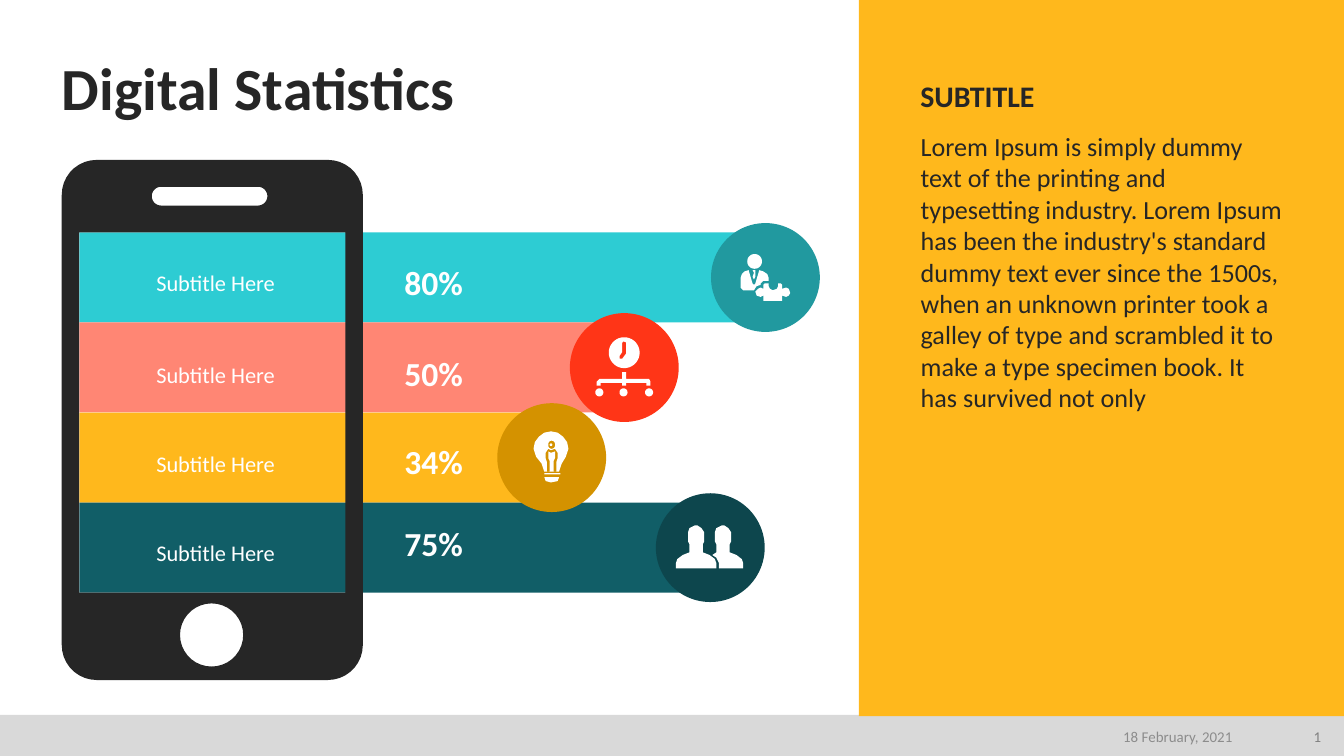
"""Build the Digital Statistics slide with a phone, four bars and icons."""
from math import cos, radians, sin

from lxml import etree
from pptx import Presentation
from pptx.dml.color import RGBColor
from pptx.enum.shapes import MSO_SHAPE
from pptx.enum.text import MSO_ANCHOR, MSO_AUTO_SIZE, PP_ALIGN
from pptx.oxml.ns import qn
from pptx.util import Inches, Pt

RECT, OVAL = MSO_SHAPE.RECTANGLE, MSO_SHAPE.OVAL
LEFT, MID, RIGHT = PP_ALIGN.LEFT, PP_ALIGN.CENTER, PP_ALIGN.RIGHT
TOP, CENTER, BOTTOM = MSO_ANCHOR.TOP, MSO_ANCHOR.MIDDLE, MSO_ANCHOR.BOTTOM

WHITE = RGBColor(0xFF, 0xFF, 0xFF)
DARK = RGBColor(0x26, 0x26, 0x26)
SILVER = RGBColor(0xD9, 0xD9, 0xD9)
GRAY = RGBColor(0x80, 0x80, 0x80)
ASH = RGBColor(0x8C, 0x8C, 0x8C)
AQUA = RGBColor(0x2D, 0xCC, 0xD3)
TEAL = RGBColor(0x21, 0x99, 0x9F)
CORAL = RGBColor(0xFF, 0x86, 0x74)
RED = RGBColor(0xFF, 0x35, 0x17)
GOLD = RGBColor(0xFF, 0xB8, 0x1C)
OCHRE = RGBColor(0xD4, 0x92, 0x00)
PINE = RGBColor(0x11, 0x5E, 0x67)
DEEP = RGBColor(0x0D, 0x46, 0x4D)

TITLE = "Digital Statistics"
HEAD = "SUBTITLE"
BODY = (
    "Lorem Ipsum is simply dummy text of the printing and typesetting industry. "
    "Lorem Ipsum has been the industry's standard dummy text ever since the 1500s, "
    "when an unknown printer took a galley of type and scrambled it to make a type "
    "specimen book. It has survived not only"
)
DATE, PAGE = "18 February, 2021", "1"

BARS = [
    ("Subtitle Here", "80%", 4.94, 5.29, AQUA, TEAL, 1.95, 1.9),
    ("Subtitle Here", "50%", 4.22, 4.24, CORAL, RED, 2.64, 2.58),
    ("Subtitle Here", "34%", 3.6, 3.7, GOLD, OCHRE, 3.3, 3.23),
    ("Subtitle Here", "75%", 4.63, 4.88, PINE, DEEP, 3.96, 3.84),
]
BAR_X, BAR_Y, BAR_H, DISK = 0.59, 1.73, 0.67, 0.81

PHONE = [
    (0.46, 1.19, 2.24, 3.87, 0.26),
    (1.13, 1.39, 0.86, 0.14),
    (1.34, 4.49, 0.47, 0.47),
    (BAR_X, BAR_Y, 1.98, 4 * BAR_H, 0),
]
JACKET = [
    (5.54, 2.02), (5.57, 2.01), (5.6, 2.11), (5.61, 2.12), (5.62, 2.11),
    (5.65, 2.01), (5.68, 2.02), (5.71, 2.04), (5.72, 2.07), (5.72, 2.09),
    (5.68, 2.09), (5.66, 2.11), (5.66, 2.12), (5.63, 2.13), (5.61, 2.16),
    (5.53, 2.16), (5.51, 2.14), (5.51, 2.07), (5.52, 2.04),
]
TIE = [
    (5.6, 2.01), (5.62, 2.01), (5.62, 2.03), (5.62, 2.06), (5.61, 2.08),
    (5.6, 2.06), (5.61, 2.03),
]
PUZZLE = [
    (5.68, 2.12), (5.69, 2.11), (5.72, 2.11), (5.72, 2.13), (5.73, 2.15),
    (5.75, 2.16), (5.78, 2.15), (5.79, 2.13), (5.79, 2.11), (5.81, 2.11),
    (5.82, 2.12), (5.82, 2.15), (5.85, 2.14), (5.87, 2.15), (5.88, 2.18),
    (5.87, 2.2), (5.85, 2.21), (5.82, 2.2), (5.82, 2.24), (5.68, 2.24),
    (5.68, 2.2), (5.66, 2.21), (5.63, 2.2), (5.62, 2.17), (5.64, 2.15),
    (5.66, 2.14), (5.68, 2.15),
]
HAND = [
    (4.63, 2.55), (4.64, 2.54), (4.66, 2.55), (4.66, 2.63), (4.63, 2.67),
    (4.61, 2.67), (4.61, 2.65), (4.63, 2.62),
]
TREE = [
    (4.44, 2.87), (4.44, 2.84), (4.46, 2.82), (4.63, 2.82), (4.63, 2.77),
    (4.66, 2.77), (4.66, 2.82), (4.83, 2.82), (4.84, 2.84), (4.84, 2.87),
    (4.81, 2.87), (4.81, 2.85), (4.66, 2.85), (4.66, 2.87), (4.63, 2.87),
    (4.63, 2.85), (4.47, 2.85), (4.47, 2.87),
]
BULB = [
    (4.05, 3.51), (4.03, 3.45), (3.99, 3.4), (3.97, 3.34), (3.98, 3.29),
    (4.01, 3.25), (4.05, 3.22), (4.1, 3.21), (4.15, 3.22), (4.19, 3.25),
    (4.22, 3.29), (4.23, 3.34), (4.21, 3.4), (4.18, 3.45), (4.16, 3.51),
]
GAP = [
    (4.07, 3.51), (4.07, 3.44), (4.06, 3.41), (4.06, 3.37), (4.08, 3.34),
    (4.1, 3.35), (4.13, 3.34), (4.15, 3.37), (4.15, 3.41), (4.14, 3.44),
    (4.14, 3.51),
]
WIRE = [
    (4.09, 3.51), (4.09, 3.43), (4.08, 3.41), (4.08, 3.36), (4.1, 3.37),
    (4.13, 3.36), (4.13, 3.41), (4.12, 3.43), (4.12, 3.51),
]
CAP = [(4.05, 3.55), (4.16, 3.55), (4.15, 3.58), (4.1, 3.59), (4.06, 3.58)]
BUST = [
    (5.03, 4.23), (5.03, 4.19), (5.04, 4.16), (5.08, 4.13), (5.13, 4.11),
    (5.13, 4.05), (5.12, 4.03), (5.12, 3.96), (5.13, 3.93), (5.17, 3.91),
    (5.19, 3.91), (5.22, 3.93), (5.24, 3.96), (5.24, 4.03), (5.23, 4.05),
    (5.23, 4.11), (5.28, 4.13), (5.32, 4.16), (5.33, 4.19), (5.33, 4.23),
]
PEER = [(5.35, 4.23), (5.35, 4.19), (5.33, 4.15), (5.3, 4.13)]
PEER += [(x + 0.2, y) for x, y in BUST[4:]]
ICONS = [
    [(5.56, 1.89, 0.11, 0.11)], [JACKET], [TIE], [PUZZLE],
    [(4.53, 2.51, 0.23, 0.23), HAND], [TREE],
    *[[(x, 2.89, 0.06, 0.06)] for x in (4.43, 4.61, 4.8)],
    [BULB, GAP, WIRE, (4.08, 3.28, 0.05, 0.06), (4.09, 3.3, 0.02, 0.02)],
    [(4.05, 3.52, 0.12, 0.01, 0)], [CAP], [PEER], [BUST],
]


def paint(shape, color):
    shape.shadow.inherit = False
    shape.fill.solid()
    shape.fill.fore_color.rgb = color
    shape.line.fill.background()


def block(slide, kind, box, color):
    paint(slide.shapes.add_shape(kind, *map(Inches, box)), color)


def curve(x, y, w, h, r=None):
    r = min(w, h) / 2 if r is None else r
    hubs = [(x + w - r, y + h - r), (x + r, y + h - r), (x + r, y + r), (x + w - r, y + r)]
    return [
        (cx + r * cos(radians(a)), cy + r * sin(radians(a)))
        for i, (cx, cy) in enumerate(hubs)
        for a in range(90 * i, 90 * i + 91, 10)
    ]


def outline(slide, rings, color):
    pen = None
    for ring in rings:
        ring = curve(*ring) if isinstance(ring, tuple) else ring
        pts = [(Inches(x), Inches(y)) for x, y in ring]
        if pen is None:
            pen = slide.shapes.build_freeform(*pts[0])
        else:
            pen.move_to(*pts[0])
        pen.add_line_segments(pts[1:], close=True)
    paint(pen.convert_to_shape(), color)


def write(shape, box, text, size, color, bold=False, align=LEFT, anchor=TOP):
    shape.left, shape.top, shape.width, shape.height = map(Inches, box)
    frame = shape.text_frame
    frame.text = text
    frame.word_wrap = True
    frame.auto_size = MSO_AUTO_SIZE.NONE
    frame.vertical_anchor = anchor
    para = frame.paragraphs[0]
    para.alignment = align
    para.space_before = Pt(0)
    font = para.runs[0].font
    font.name, font.size, font.bold = "Calibri", Pt(size), bold
    font.color.rgb = color
    return frame


def label(slide, box, *style, **more):
    write(slide.shapes.add_textbox(0, 0, 0, 0), box, *style, **more)


def main():
    deck = Presentation()
    deck.slide_width = Inches(10)
    deck.slide_height = deck.slide_width * 9 // 16
    slide = deck.slides.add_slide(deck.slide_layouts[1])
    title, body = slide.placeholders
    block(slide, RECT, (0, 5.32, 10, 0.31), SILVER)
    block(slide, RECT, (6.39, 0, 3.61, 5.33), GOLD)

    for i, (_, _, wide, _, tint, *_) in enumerate(BARS):
        block(slide, RECT, (BAR_X, BAR_Y + i * BAR_H, wide, BAR_H), tint)
    for i, (name, rate, _, x, _, shade, name_y, rate_y) in enumerate(BARS):
        y = BAR_Y + (i + 0.5) * BAR_H - DISK / 2
        block(slide, OVAL, (x, y, DISK, DISK), shade)
        label(slide, (0.94, name_y, 1.33, 0.3), name, 12, WHITE, align=MID)
        label(slide, (2.91, rate_y, 1.05, 0.4), rate, 18, WHITE, bold=True)
    for rings in ICONS:
        outline(slide, rings, WHITE)
    outline(slide, PHONE, DARK)

    for holder in (title, body):
        holder.element.getparent().append(holder.element)
    frame = write(title, (0.46, 0.4, 9.1, 0.52), TITLE, 32, DARK, bold=True, anchor=BOTTOM)
    frame.margin_left = frame.margin_right = frame.margin_top = frame.margin_bottom = 0
    frame.paragraphs[0].line_spacing = 0.9
    frame = write(body, (6.75, 0.92, 2.9, 2.69), BODY, 14, DARK)
    props = frame.paragraphs[0]._p.get_or_add_pPr()
    props.set("marL", "0")
    props.set("indent", "0")
    etree.SubElement(props, qn("a:buNone"))
    label(slide, (6.75, 0.53, 2.51, 0.37), HEAD, 16, DARK, bold=True)
    label(slide, (7.02, 5.35, 2.25, 0.26), DATE, 8, ASH, align=RIGHT, anchor=CENTER)
    label(slide, (9.56, 5.35, 0.37, 0.26), PAGE, 8, GRAY, align=RIGHT, anchor=CENTER)
    deck.save("out.pptx")


if __name__ == "__main__":
    main()
